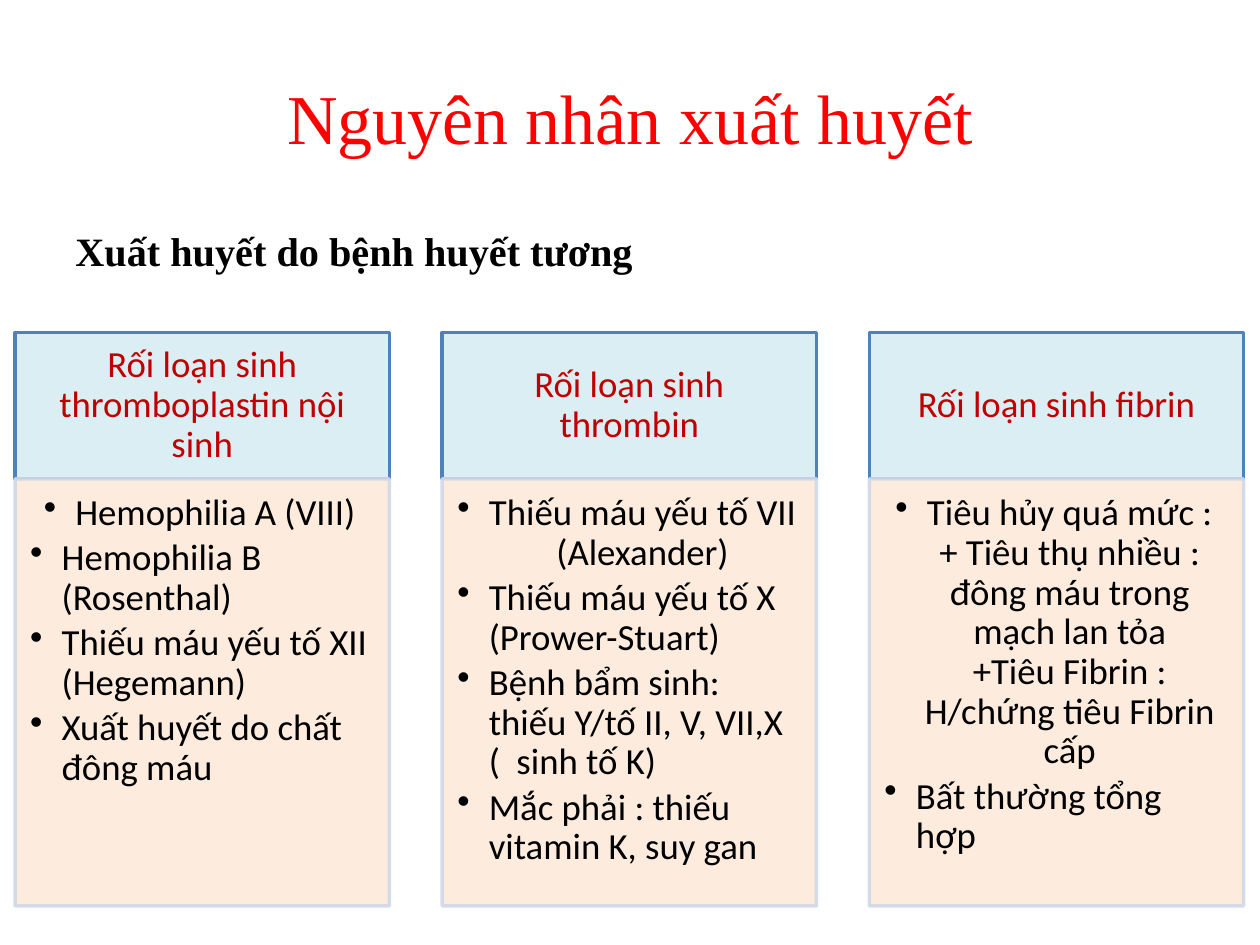
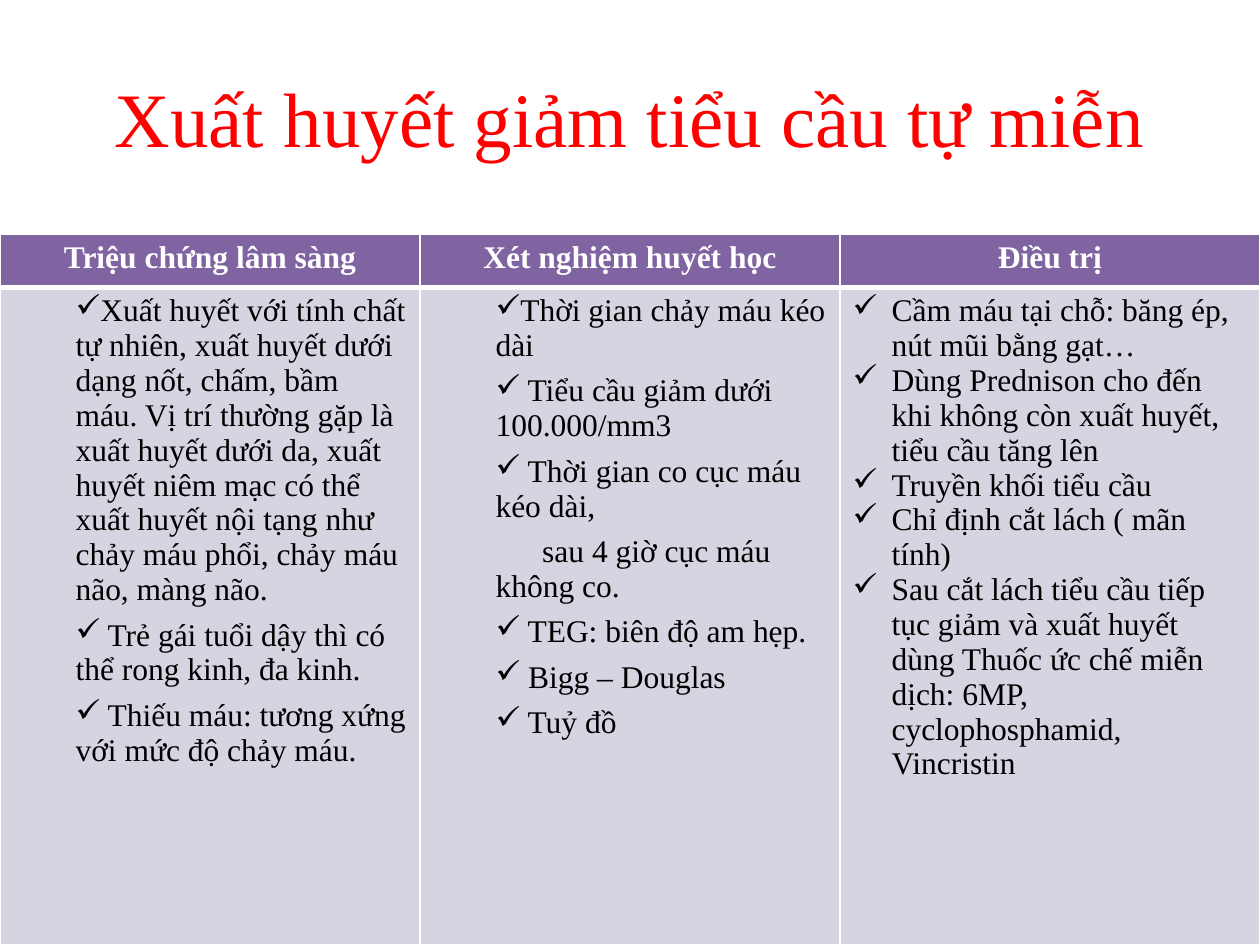
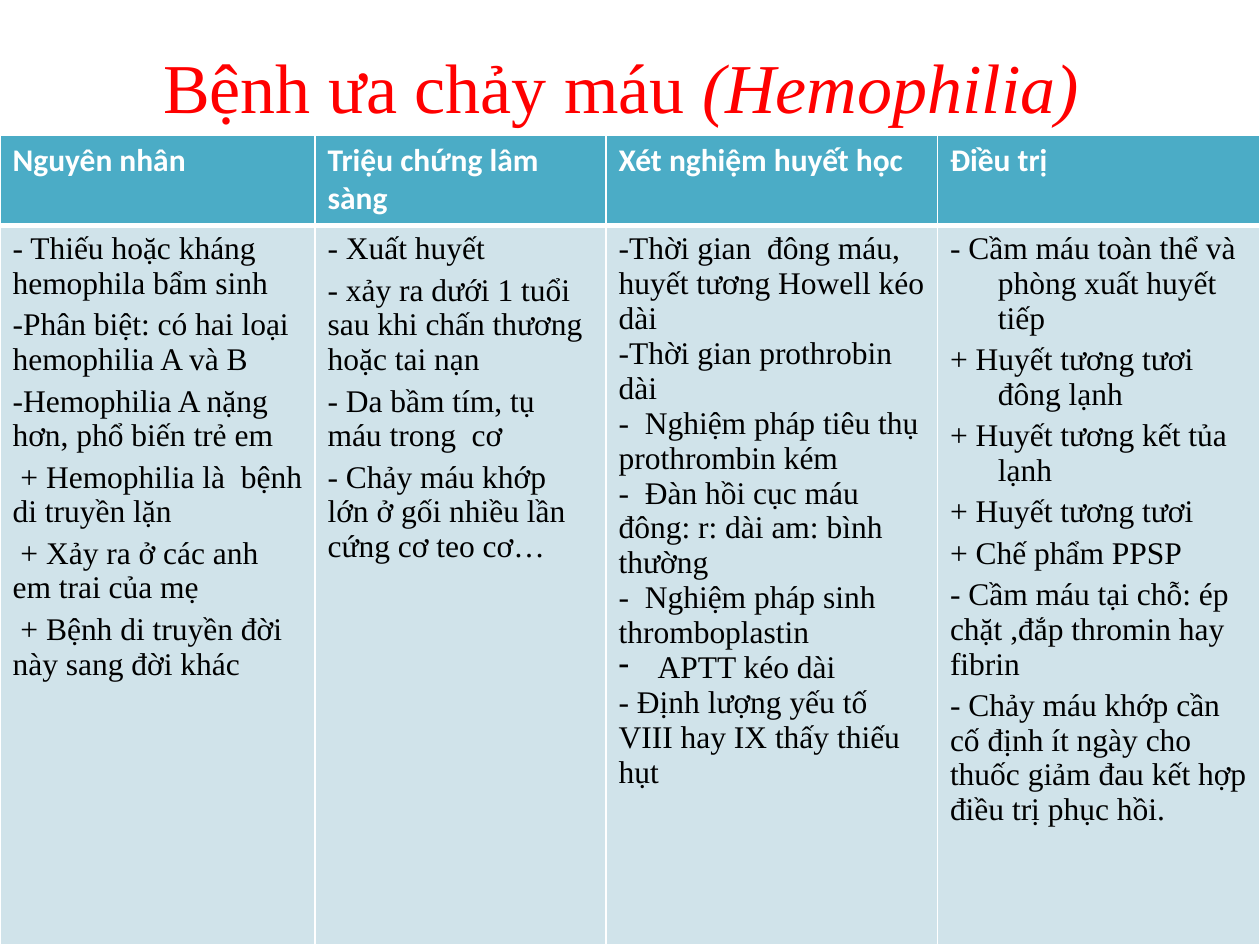
from lxml.etree import SubElement
from pptx import Presentation
from pptx.dml.color import RGBColor
from pptx.enum.shapes import MSO_SHAPE
from pptx.enum.text import MSO_ANCHOR, PP_ALIGN
from pptx.oxml.ns import qn
from pptx.util import Inches, Pt

COLORS = {
    "title": "FF0000", "text": "000000", "white": "FFFFFF",
    "card_head": "DBEEF4", "card_head_line": "4F81BD", "card_head_text": "C00000",
    "card_body": "FDEADA", "card_body_line": "D0D8E8",
    "purple": "8064A2", "purple_light": "D8D3E0",
    "teal": "4BACC6", "teal_light": "D0E3EA",
}
SERIF, SANS = "Times New Roman", "Calibri"

STYLES = {
    "plain": {},
    "center": {"alignment": PP_ALIGN.CENTER},
    "card_head": {"alignment": PP_ALIGN.CENTER, "line_spacing": 0.9},
    "card_item": {"line_spacing": 0.9, "space_after": Pt(3.2),
                  "left": 0.25, "first": -0.25, "bullet": "•"},
    "check": {"space_before": Pt(6), "left": 0.5, "first": 0, "bullet": "✓"},
    "follow": {"space_before": Pt(6), "left": 0.5, "first": 0.37},
    "check_hang": {"left": 0.31, "first": -0.31, "bullet": "✓"},
    "dash_hang": {"left": 0.31, "first": -0.31, "bullet": "-"},
    "spaced": {"space_before": Pt(3.6)},
    "spaced_hang": {"space_before": Pt(3.6), "left": 0.38, "first": -0.38},
}

CARDS = [
    ("Rối loạn sinh thromboplastin nội sinh", [
        "Hemophilia A (VIII)",
        "Hemophilia B (Rosenthal)",
        "Thiếu máu yếu tố XII (Hegemann)",
        "Xuất huyết do chất đông máu"]),
    ("Rối loạn sinh thrombin", [
        "Thiếu máu yếu tố VII (Alexander)",
        "Thiếu máu yếu tố X (Prower-Stuart)",
        "Bệnh bẩm sinh: thiếu Y/tố II, V, VII,X (  sinh tố K)",
        "Mắc phải : thiếu vitamin K, suy gan"]),
    ("Rối loạn sinh fibrin", [
        "Tiêu hủy quá mức :\v+ Tiêu thụ nhiều : đông máu trong mạch lan tỏa\v"
        "+Tiêu Fibrin : H/chứng tiêu Fibrin cấp",
        "Bất thường tổng hợp"]),
]

PLATELET_COLUMNS = [
    ("Triệu chứng lâm sàng", [
        ("check", [
            "Xuất huyết với tính chất tự nhiên, xuất huyết dưới dạng nốt, chấm, bầm máu. "
            "Vị trí thường gặp là xuất huyết dưới da, xuất huyết niêm mạc có thể xuất huyết "
            "nội tạng như chảy máu phổi, chảy máu não, màng não.",
            " Trẻ gái tuổi dậy thì có thể rong kinh, đa kinh.",
            " Thiếu máu: tương xứng với mức độ chảy máu."])]),
    ("Xét nghiệm huyết học", [
        ("check", [
            "Thời gian chảy máu kéo dài",
            " Tiểu cầu giảm dưới 100.000/mm3",
            " Thời gian co cục máu kéo dài,"]),
        ("follow", ["sau 4 giờ cục máu không co."]),
        ("check", [" TEG: biên độ am hẹp.", " Bigg – Douglas", " Tuỷ đồ"])]),
    ("Điều trị", [
        ("check_hang", [
            "Cầm máu tại chỗ: băng ép, nút mũi bằng gạt…",
            "Dùng Prednison cho đến khi không còn xuất huyết, tiểu cầu tăng lên",
            "Truyền khối tiểu cầu",
            "Chỉ định cắt lách ( mãn tính)",
            "Sau cắt lách tiểu cầu tiếp tục giảm và xuất huyết dùng Thuốc ức chế miễn dịch: "
            "6MP, cyclophosphamid, Vincristin"])]),
]

HEMOPHILIA_COLUMNS = [
    ("Nguyên nhân", [
        ("spaced", [
            "- Thiếu hoặc kháng hemophila bẩm sinh",
            "-Phân biệt: có hai loại hemophilia A và B",
            "-Hemophilia A nặng hơn, phổ biến trẻ em",
            " + Hemophilia là  bệnh di truyền lặn",
            " + Xảy ra ở các anh em trai của mẹ",
            " + Bệnh di truyền đời này sang đời khác"])]),
    ("Triệu chứng lâm sàng", [
        ("spaced", [
            "- Xuất huyết",
            "- xảy ra dưới 1 tuổi sau khi chấn thương hoặc tai nạn",
            "- Da bầm tím, tụ máu trong  cơ",
            "- Chảy máu khớp lớn ở gối nhiều lần cứng cơ teo cơ…"])]),
    ("Xét nghiệm huyết học", [
        ("plain", [
            "-Thời gian  đông máu, huyết tương Howell kéo dài",
            "-Thời gian prothrobin dài",
            "-  Nghiệm pháp tiêu thụ prothrombin kém",
            "-  Đàn hồi cục máu đông: r: dài am: bình thường",
            "-  Nghiệm pháp sinh thromboplastin"]),
        ("dash_hang", ["APTT kéo dài"]),
        ("plain", ["- Định lượng yếu tố VIII hay IX thấy thiếu hụt"])]),
    ("Điều trị", [
        ("spaced_hang", [
            "- Cầm máu toàn thể và phòng xuất huyết tiếp",
            "+ Huyết tương tươi đông lạnh",
            "+ Huyết tương kết tủa lạnh",
            "+ Huyết tương tươi",
            "+ Chế phẩm PPSP"]),
        ("spaced", [
            "- Cầm máu tại chỗ: ép chặt ,đắp thromin hay fibrin",
            "- Chảy máu khớp cần cố định ít ngày cho thuốc giảm đau kết hợp điều trị phục hồi."])]),
]


def rgb(name):
    """Return the named colour."""
    return RGBColor.from_string(COLORS[name])


def set_values(obj, values):
    """Set each attribute of obj from a dict."""
    for name, value in values.items():
        setattr(obj, name, value)


def style_run(r, size, font, color, **more):
    """Format one run."""
    set_values(r.font, {"size": Pt(size), "name": font, **more})
    r.font.color.rgb = rgb(color)


def style_paragraph(p, style):
    """Give a paragraph its alignment, spacing, indent and bullet."""
    values = dict(STYLES[style])
    left, first = values.pop("left", None), values.pop("first", None)
    bullet = values.pop("bullet", None)
    set_values(p, values)
    pPr = p._p.get_or_add_pPr()
    if left is not None:
        pPr.set("marL", str(Inches(left)))
        pPr.set("indent", str(Inches(first)))
    if bullet:
        SubElement(pPr, qn("a:buChar")).set("char", bullet)


def fill_text(tf, groups, **font):
    """Write (style, texts) groups as the paragraphs of a text frame."""
    lines = [(style, text) for style, texts in groups for text in texts]
    for i, (style, text) in enumerate(lines):
        p = tf.add_paragraph() if i else tf.paragraphs[0]
        p.text = text
        style_paragraph(p, style)
        for r in p.runs:
            style_run(r, **font)


def set_margins(tf, left, top, right, bottom):
    """Set the insets of a text frame in inches."""
    set_values(tf, {"margin_left": Inches(left), "margin_top": Inches(top),
                    "margin_right": Inches(right), "margin_bottom": Inches(bottom)})


def add_text_box(slide, box, anchor):
    """Add a wrapping text box and return its text frame."""
    tf = slide.shapes.add_textbox(*map(Inches, box)).text_frame
    set_values(tf, {"word_wrap": True, "vertical_anchor": anchor})
    return tf


def add_title(slide, box, parts, size):
    """Add the centred red title from (text, italic) parts."""
    p = add_text_box(slide, box, MSO_ANCHOR.MIDDLE).paragraphs[0]
    style_paragraph(p, "center")
    for text, italic in parts:
        r = p.add_run()
        r.text = text
        style_run(r, size, SERIF, "title", italic=italic)


def add_panel(slide, box, fill, line, anchor, alpha=100):
    """Add an outlined rectangle and return its text frame."""
    sp = slide.shapes.add_shape(MSO_SHAPE.RECTANGLE, *map(Inches, box))
    sp.shadow.inherit = False
    sp.fill.solid()
    sp.fill.fore_color.rgb = rgb(fill)
    sp.line.color.rgb = rgb(line)
    sp.line.width = Pt(2)
    if alpha < 100:
        for clr in sp._element.spPr.iter(qn("a:srgbClr")):
            SubElement(clr, qn("a:alpha")).set("val", str(alpha * 1000))
    set_values(sp.text_frame, {"word_wrap": True, "vertical_anchor": anchor})
    return sp.text_frame


def add_card(slide, box, heading, items):
    """Add a heading panel with a bulleted panel beneath it."""
    x, y, w, h = box
    head_h = 1.16
    tf = add_panel(slide, (x, y, w, head_h), "card_head", "card_head_line", MSO_ANCHOR.MIDDLE)
    set_margins(tf, 0.16, 0.09, 0.16, 0.09)
    fill_text(tf, [("card_head", [heading])], size=21, font=SANS, color="card_head_text")
    tf = add_panel(slide, (x, y + head_h, w, h - head_h), "card_body", "card_body_line",
                   MSO_ANCHOR.TOP, alpha=90)
    set_margins(tf, 0.12, 0.12, 0.16, 0.18)
    fill_text(tf, [("card_item", items)], size=21, font=SANS, color="text")


def add_cards(slide, box, cards):
    """Spread equal cards across a box."""
    x, y, w, h = box
    card_w = 2.97
    step = (w - card_w) / (len(cards) - 1)
    for i, (heading, items) in enumerate(cards):
        add_card(slide, (x + i * step, y, card_w, h), heading, items)


def style_cell(cell, fill, bottom):
    """Give a cell white borders and a solid fill."""
    tcPr = cell._tc.get_or_add_tcPr()
    for side, width in {"L": 1, "R": 1, "T": 1, "B": bottom}.items():
        ln = SubElement(tcPr, qn(f"a:ln{side}"), w=str(Pt(width)))
        SubElement(SubElement(ln, qn("a:solidFill")), qn("a:srgbClr"), val=COLORS["white"])
    cell.fill.solid()
    cell.fill.fore_color.rgb = rgb(fill)


def add_columns_table(slide, box, columns, widths, head_h, head, fills):
    """Add a table with one heading row and one tall row of notes."""
    table = slide.shapes.add_table(2, len(columns), *map(Inches, box)).table
    set_values(table, {"first_row": False, "horz_banding": False})
    for row, height in zip(table.rows, (head_h, box[3] - head_h)):
        row.height = Inches(height)
    for i, (heading, groups) in enumerate(columns):
        table.columns[i].width = Inches(widths[i])
        top, body = table.cell(0, i), table.cell(1, i)
        style_cell(top, fills[0], 3)
        style_cell(body, fills[1], 1)
        fill_text(top.text_frame, [(head["style"], [heading])],
                  size=18, font=head["font"], color="white", bold=True)
        fill_text(body.text_frame, groups, size=18, font=SERIF, color="text", bold=False)


def build_causes(slide):
    """Build the slide of causes in three cards."""
    add_title(slide, (0.5, 0.3, 9, 1.25), [("Nguyên nhân xuất huyết", False)], 40)
    tf = add_text_box(slide, (0.5, 1.75, 9, 0.6), MSO_ANCHOR.TOP)
    fill_text(tf, [("plain", ["Xuất huyết do bệnh huyết tương"])],
              size=23, font=SERIF, color="text", bold=True)
    add_cards(slide, (0.12, 2.64, 9.75, 4.55), CARDS)


def build_platelets(slide):
    """Build the slide on immune thrombocytopenia."""
    add_title(slide, (0.5, 0.3, 9, 1.25), [("Xuất huyết giảm tiểu cầu tự miễn", False)], 44)
    add_columns_table(slide, (0, 1.86, 10, 5.64), PLATELET_COLUMNS, [10 / 3] * 3, 0.42,
                      {"style": "center", "font": SERIF}, ("purple", "purple_light"))


def build_hemophilia(slide):
    """Build the slide on hemophilia."""
    add_title(slide, (0.43, 0.13, 9, 1.09),
              [("Bệnh ưa chảy máu ", False), ("(Hemophilia)", True)], 40)
    add_columns_table(slide, (0, 1.07, 10, 6.43), HEMOPHILIA_COLUMNS,
                      [2.5, 2.31, 2.63, 2.56], 0.72,
                      {"style": "plain", "font": SANS}, ("teal", "teal_light"))


def main():
    """Build and save the presentation."""
    prs = Presentation()
    set_values(prs, {"slide_width": Inches(10), "slide_height": Inches(7.5)})
    for build in (build_causes, build_platelets, build_hemophilia):
        build(prs.slides.add_slide(prs.slide_layouts[6]))
    prs.save("out.pptx")


if __name__ == "__main__":
    main()
